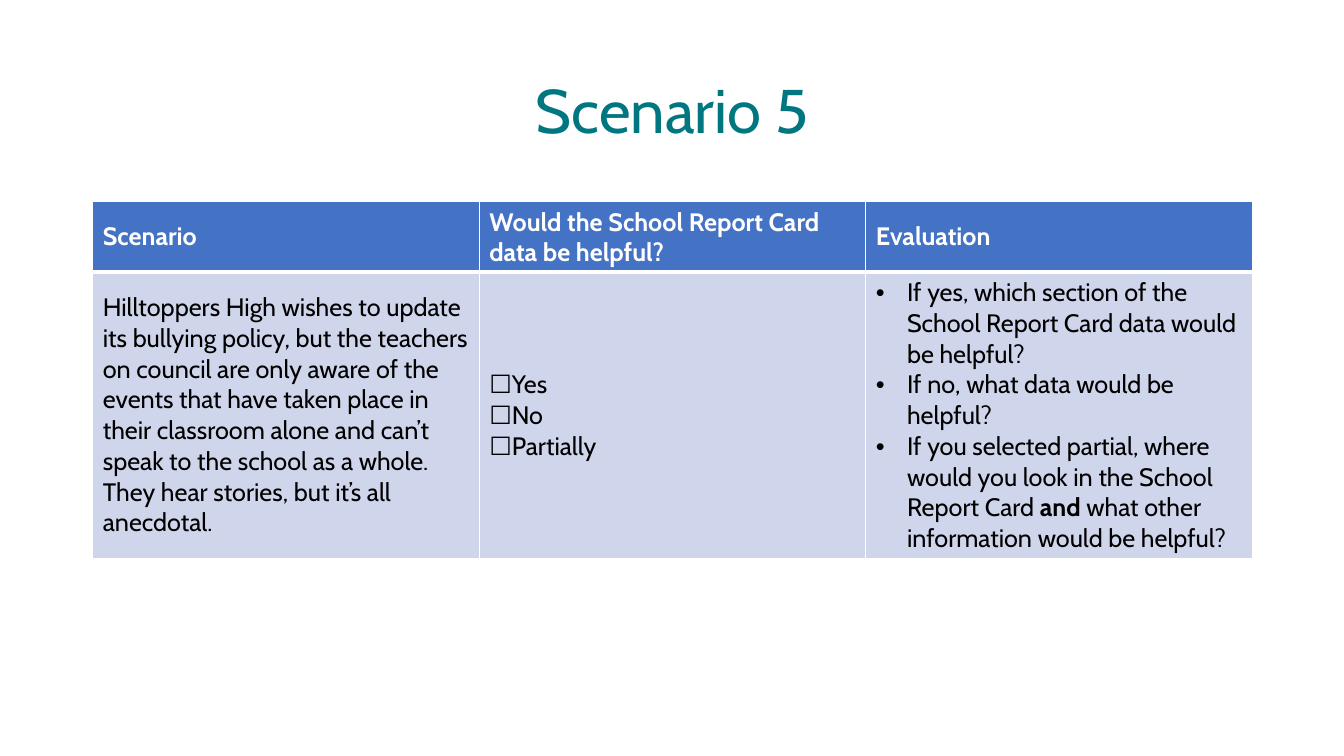
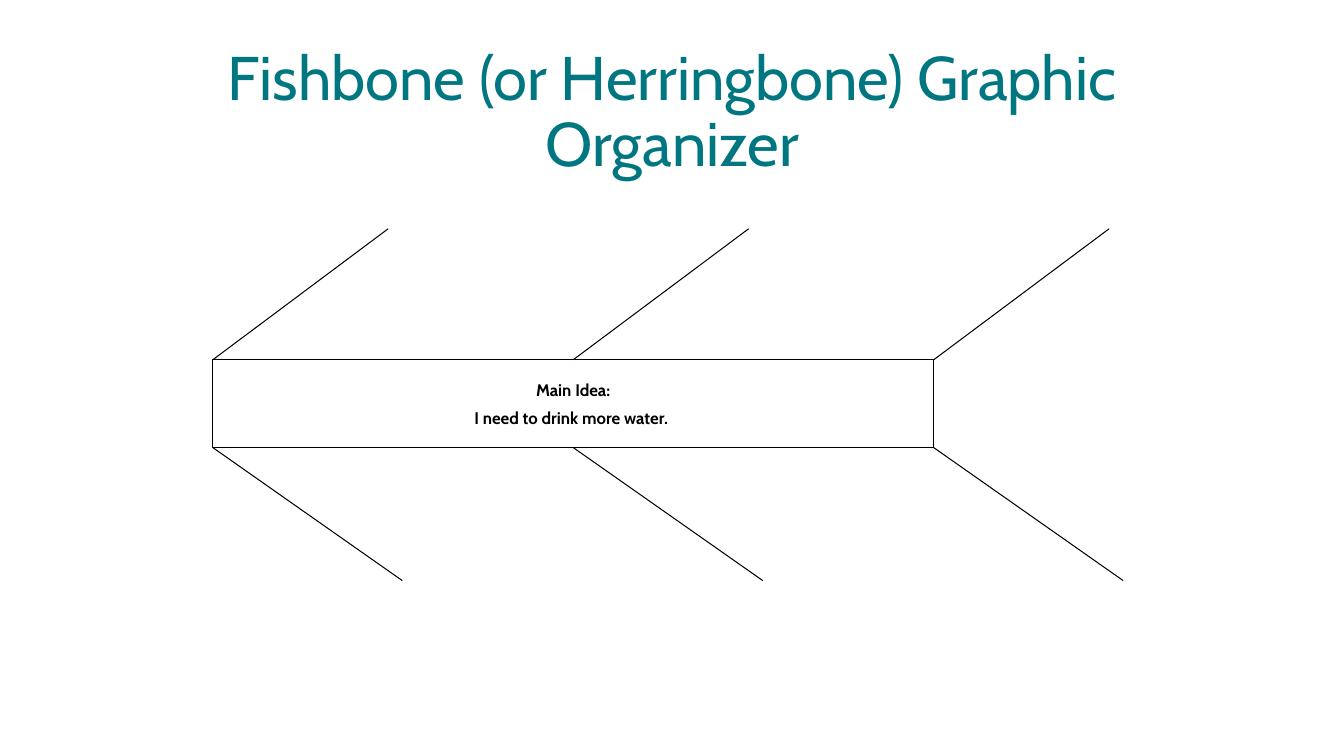
from lxml import etree
from pptx import Presentation
from pptx.dml.color import RGBColor
from pptx.enum.shapes import MSO_CONNECTOR, MSO_SHAPE
from pptx.enum.text import MSO_ANCHOR, PP_ALIGN
from pptx.oxml.ns import qn
from pptx.util import Inches, Pt

LINE = MSO_CONNECTOR.STRAIGHT
RECT = MSO_SHAPE.RECTANGLE
MIDDLE = MSO_ANCHOR.MIDDLE
CENTER = PP_ALIGN.CENTER

TEAL = RGBColor(0x00, 0x77, 0x80)
BLUE = RGBColor(0x44, 0x72, 0xC4)
PALE = RGBColor(0xCF, 0xD5, 0xEA)
WHITE = RGBColor(0xFF, 0xFF, 0xFF)
BLACK = RGBColor(0x00, 0x00, 0x00)
FONT = "Cabin"


class Deck:
    """Holds the shared style and the current slide."""

    def __init__(self):
        self.prs = Presentation()
        self.prs.slide_width = Inches(13.33)
        self.prs.slide_height = Inches(7.5)
        self.slide = None

    def start(self, title):
        """Add a slide with its title."""
        self.slide = self.prs.slides.add_slide(self.prs.slide_layouts[6])
        box = self.slide.shapes.add_textbox(
            Inches(0.92), Inches(0.4), Inches(11.5), Inches(1.45))
        frame = box.text_frame
        frame.word_wrap = True
        frame.vertical_anchor = MIDDLE
        frame.text = title
        para = frame.paragraphs[0]
        para.alignment = CENTER
        para.line_spacing = 0.9
        self.style(para, 44, TEAL)

    def style(self, para, size, color, bold=False):
        for run in para.runs:
            font = run.font
            font.name, font.size, font.bold = FONT, Pt(size), bold
            font.color.rgb = color

    def bullet(self, para, indent):
        props = para._p.get_or_add_pPr()
        props.set("marL", str(Inches(indent)))
        props.set("indent", str(-Inches(indent)))
        etree.SubElement(props, qn("a:buFont"), typeface="Arial")
        etree.SubElement(props, qn("a:buChar"), char="•")

    def edges(self, cell, top, bottom):
        """Draw white borders; top and bottom are widths in points."""
        props = cell._tc.get_or_add_tcPr()
        for side, width in (("L", 1), ("R", 1), ("T", top), ("B", bottom)):
            line = etree.SubElement(props, qn("a:ln" + side), w=str(Pt(width)))
            fill = etree.SubElement(line, qn("a:solidFill"))
            etree.SubElement(fill, qn("a:srgbClr"), val=str(WHITE))

    def cell(self, cell, lines, head, listed):
        """Fill a cell; text between asterisks is bold."""
        self.edges(cell, 1 if head else 3, 3 if head else 1)
        cell.fill.solid()
        cell.fill.fore_color.rgb = BLUE if head else PALE
        cell.vertical_anchor = MIDDLE
        frame = cell.text_frame
        for i, line in enumerate(lines):
            para = frame.add_paragraph() if i else frame.paragraphs[0]
            if listed:
                self.bullet(para, 0.31)
            for part in line.split("*"):
                para.add_run().text = part
            self.style(para, 18, WHITE if head else BLACK, head)
            for run in para.runs[1::2]:
                run.font.bold = True

    def table(self, left, top, width, heights, rows, listed):
        """Add a table with a header row and one bulleted column."""
        count = len(rows[0])
        table = self.slide.shapes.add_table(
            len(rows), count, Inches(left), Inches(top),
            Inches(width), Inches(sum(heights))).table
        for col in table.columns:
            col.width = Inches(width / count)
        for r, row in enumerate(rows):
            table.rows[r].height = Inches(heights[r])
            for c, lines in enumerate(row):
                self.cell(table.cell(r, c), lines, r == 0,
                          r > 0 and c == listed)

    def box(self, left, top, width, height, lines):
        """Add an outlined box with bold centred text."""
        shape = self.slide.shapes.add_shape(
            RECT, Inches(left), Inches(top), Inches(width), Inches(height))
        shape.shadow.inherit = False
        shape.fill.solid()
        shape.fill.fore_color.rgb = WHITE
        shape.line.color.rgb = BLACK
        shape.line.width = Pt(0.75)
        frame = shape.text_frame
        frame.word_wrap = True
        frame.vertical_anchor = MIDDLE
        frame.text = "\n".join(lines)
        for para in frame.paragraphs:
            para.alignment = CENTER
            para.line_spacing = 1.02
            para.space_after = Pt(5.5)
            self.style(para, 12, BLACK, True)

    def line(self, x1, y1, x2, y2):
        """Add a thin black line."""
        line = self.slide.shapes.add_connector(
            LINE, Inches(x1), Inches(y1), Inches(x2), Inches(y2))
        line.line.color.rgb = BLACK
        line.line.width = Pt(0.75)
        etree.SubElement(line._element.spPr, qn("a:effectLst"))


def main():
    deck = Deck()

    # Scenario table
    deck.start("Scenario 5")
    head = [["Scenario"], ["Would the School Report Card data be helpful?"],
            ["Evaluation"]]
    body = [
        ["Hilltoppers High wishes to update its bullying policy, but the "
         "teachers on council are only aware of the events that have taken "
         "place in their classroom alone and can’t speak to the school as a "
         "whole. They hear stories, but it’s all anecdotal."],
        ["☐Yes", "☐No", "☐Partially"],
        ["If yes, which section of the School Report Card data would be "
         "helpful?",
         "If no, what data would be helpful?",
         "If you selected partial, where would you look in the School Report "
         "Card *and* what other information would be helpful?"],
    ]
    deck.table(0.92, 2, 11.5, (0.7, 2.84), [head, body], listed=2)

    # Fishbone: a spine box with three pairs of ribs
    deck.start("Fishbone (or Herringbone) Graphic Organizer")
    left, top, width, height = 2.11, 3.57, 7.15, 0.87
    deck.box(left, top, width, height,
             ["Main Idea:", "I need to drink more water. "])
    for i in range(3):
        x = left + i * width / 2
        deck.line(x, top, x + 1.74, 2.27)
        deck.line(x, top + height, x + 1.88, 5.76)

    deck.prs.save("out.pptx")


if __name__ == "__main__":
    main()
